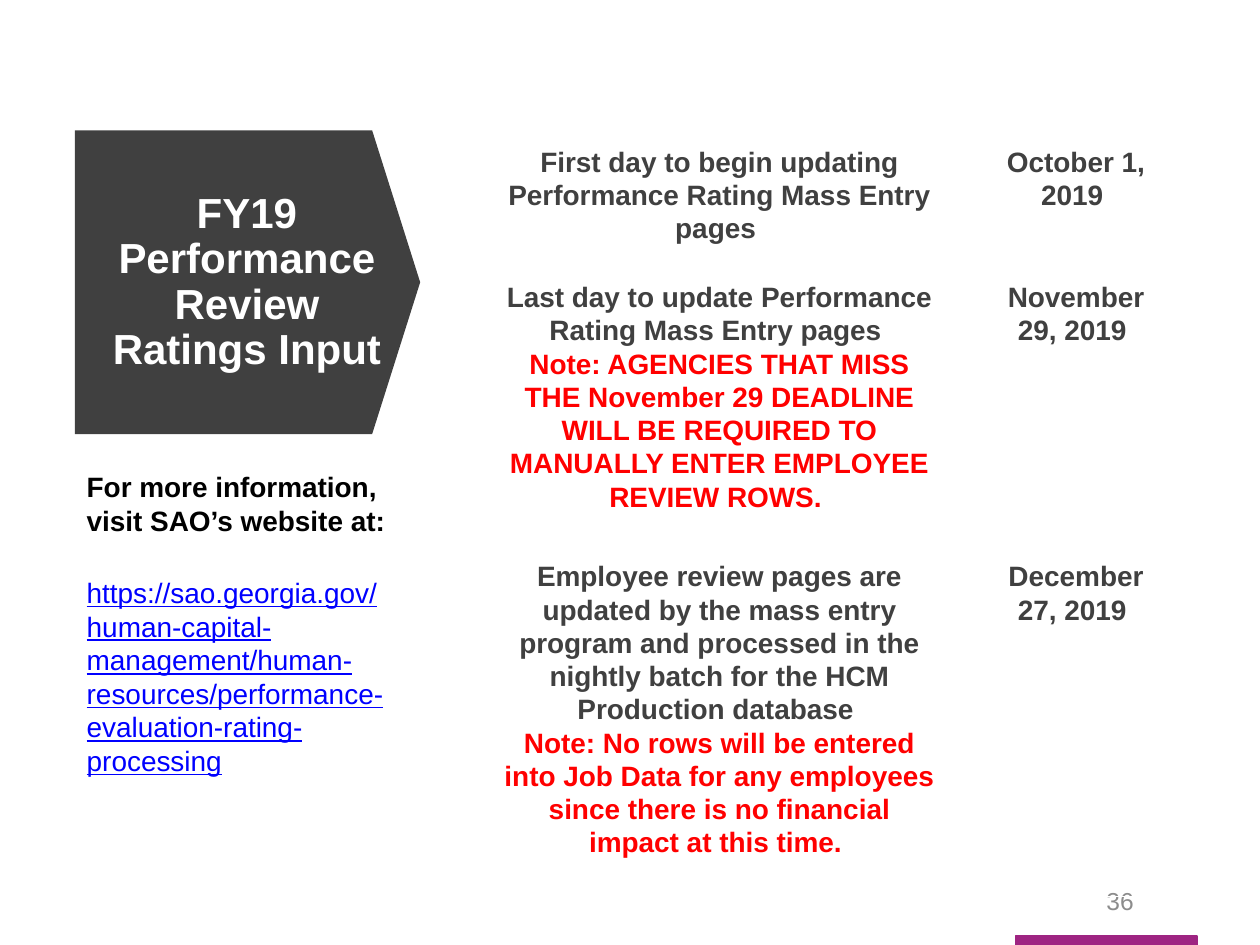
import pptx
import pptx.util
import pptx.dml.color
import pptx.enum.shapes
import pptx.enum.text
from dataclasses import dataclass

Inches = pptx.util.Inches
Pt = pptx.util.Pt
Shape = pptx.enum.shapes.MSO_SHAPE
Align = pptx.enum.text.PP_ALIGN
Anchor = pptx.enum.text.MSO_ANCHOR


@dataclass(frozen=True)
class Theme:
    font: str = "Arial"
    dark: str = "404040"
    white: str = "FFFFFF"
    black: str = "000000"
    alert: str = "FF0000"
    link: str = "0000FF"
    gray: str = "8C8C8C"
    accent: str = "9E2482"
    title: int = 24
    body: int = 16
    number: int = 14


THEME = Theme()

DATES = [
    (1, "First day to begin updating Performance Rating Mass Entry pages ",
     None, "October 1, 2019 "),
    (1.76, "Last day to update Performance Rating Mass Entry pages ",
     "Note: AGENCIES THAT MISS THE November 29 DEADLINE WILL BE REQUIRED "
     "TO MANUALLY ENTER EMPLOYEE REVIEW ROWS. ", "November 29, 2019 "),
    (2.26, "Employee review pages are updated by the mass entry program and "
     "processed in the nightly batch for the HCM Production database ",
     "Note: No rows will be entered into Job Data for any employees since "
     "there is no financial impact at this time. ", "December 27, 2019 "),
]


def paint(color):
    return pptx.dml.color.RGBColor.from_string(color)


def write(para, text, size, color, bold=False, line=False):
    run = para.add_run()
    run.text = text
    font = run.font
    font.name = THEME.font
    font.size = Pt(size)
    font.bold = bold
    font.underline = line
    font.color.rgb = paint(color)


def add_box(slide, left, top, width, height, anchor=Anchor.TOP):
    box = slide.shapes.add_textbox(
        Inches(left), Inches(top), Inches(width), Inches(height))
    frame = box.text_frame
    frame.word_wrap = True
    frame.vertical_anchor = anchor
    return frame


def add_block(slide, kind, left, top, width, height, color):
    block = slide.shapes.add_shape(
        kind, Inches(left), Inches(top), Inches(width), Inches(height))
    block.shadow.inherit = False
    block.fill.solid()
    block.fill.fore_color.rgb = paint(color)
    block.line.fill.background()
    return block


def add_title(slide):
    arrow = add_block(slide, Shape.DOWN_ARROW, 0.76, 0.87, 2.41, 2.74,
                      THEME.dark)
    arrow.rotation = 270
    arrow.adjustments[0] = 1
    arrow.adjustments[1] = 0.158
    para = add_box(slide, 0.78, 1.27, 2.36, 1.95, Anchor.MIDDLE).paragraphs[0]
    para.alignment = Align.CENTER
    para.line_spacing = 0.9
    write(para, "FY19 Performance Review Ratings Input", THEME.title,
          THEME.white, bold=True)


def fill_cell(cell, text, note=None):
    cell.fill.background()
    cell.margin_left = Inches(0.22)
    cell.margin_right = Inches(0.16)
    cell.margin_top = cell.margin_bottom = Inches(0.11)
    frame = cell.text_frame
    parts = [(text, THEME.dark)]
    if note:
        parts.append((note, THEME.alert))
    for i, (words, color) in enumerate(parts):
        para = frame.add_paragraph() if i else frame.paragraphs[0]
        para.alignment = Align.CENTER
        para.line_spacing = 1.07
        write(para, words, THEME.body, color, bold=True)


def add_dates(slide):
    widths = (3.86, 1.8)
    table = slide.shapes.add_table(
        len(DATES), len(widths), Inches(3.75), Inches(1.04),
        Inches(sum(widths)), Inches(sum(row[0] for row in DATES))).table
    table.first_row = table.horz_banding = False
    for col, width in zip(table.columns, widths):
        col.width = Inches(width)
    for i, (height, task, note, date) in enumerate(DATES):
        table.rows[i].height = Inches(height)
        fill_cell(table.cell(i, 0), task, note)
        fill_cell(table.cell(i, 1), date)


def add_info(slide):
    frame = add_box(slide, 0.59, 3.68, 2.74, 2.56)
    write(frame.paragraphs[0], "For more information, visit SAO’s website at:",
          THEME.body, THEME.black, bold=True)
    para = frame.add_paragraph()
    para.space_before = Pt(22)
    write(para, "https://sao.georgia.gov/human-capital-management/"
          "human-resources/performance-evaluation-rating-processing",
          THEME.body, THEME.link, line=True)


def add_footer(slide):
    bar = add_block(slide, Shape.RECTANGLE, 8.06, 7.43, 1.44, 0.07,
                    THEME.accent)
    bar.line.color.rgb = paint(THEME.accent)
    bar.line.width = Pt(0.75)
    para = add_box(slide, 8.47, 6.95, 0.84, 0.4, Anchor.MIDDLE).paragraphs[0]
    para.alignment = Align.CENTER
    para.space_after = Pt(6)
    write(para, "36", THEME.number, THEME.gray)


def main():
    deck = pptx.Presentation()
    deck.slide_width = Inches(10)
    deck.slide_height = Inches(7.5)
    slide = deck.slides.add_slide(deck.slide_layouts[6])
    add_footer(slide)
    add_title(slide)
    add_dates(slide)
    add_info(slide)
    deck.save("out.pptx")


if __name__ == "__main__":
    main()
